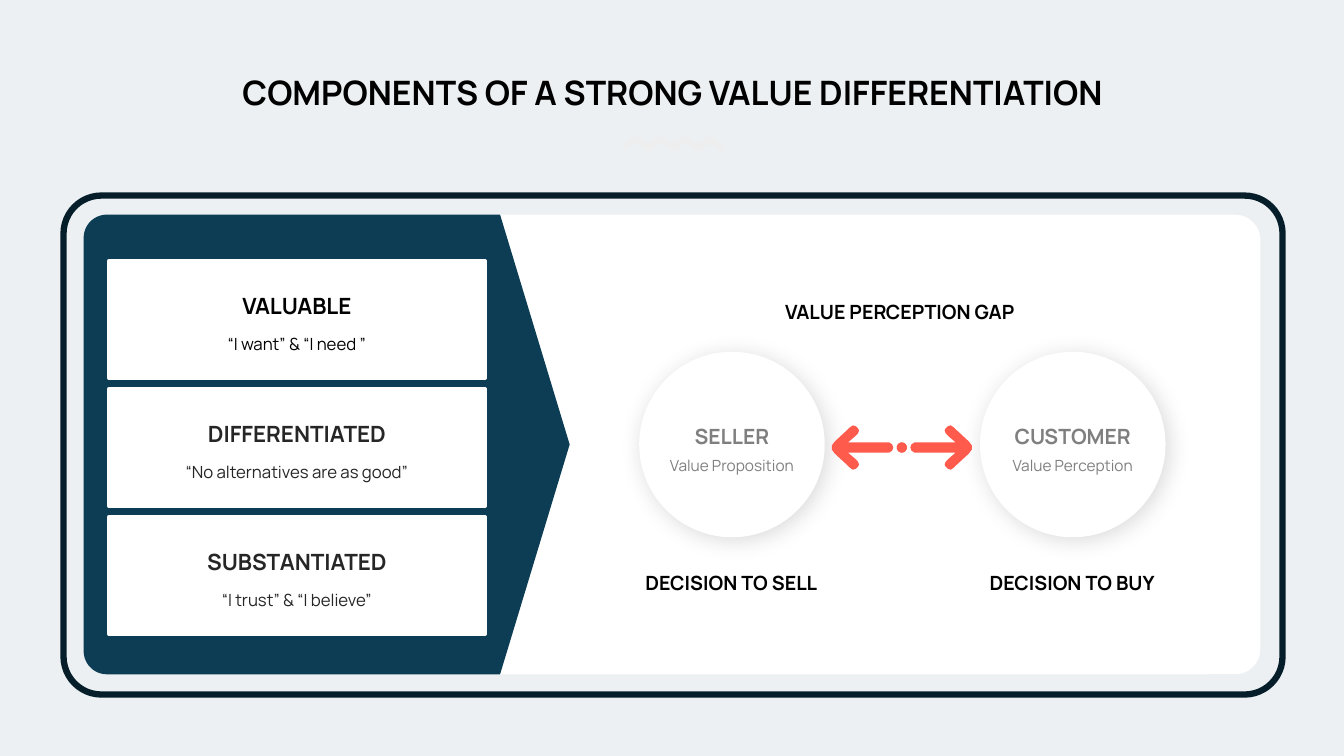
"""Build the slide on the components of a strong value differentiation."""
from copy import deepcopy
from math import cos, pi, radians, sin

from lxml.etree import SubElement
from pptx import Presentation
from pptx.dml.color import RGBColor
from pptx.enum.shapes import MSO_SHAPE
from pptx.enum.text import MSO_ANCHOR, MSO_AUTO_SIZE, PP_ALIGN
from pptx.oxml.ns import qn
from pptx.util import Inches, Pt

BACKGROUND = RGBColor(0xEC, 0xF0, 0xF2)
WHITE = RGBColor(0xFF, 0xFF, 0xFF)
BLACK = RGBColor(0x00, 0x00, 0x00)
NAVY = RGBColor(0x0C, 0x3D, 0x54)
MIDNIGHT = RGBColor(0x05, 0x1E, 0x2A)
CHARCOAL = RGBColor(0x26, 0x26, 0x26)
GREY = RGBColor(0x7F, 0x7F, 0x7F)
PALE = RGBColor(0xEE, 0xEE, 0xEE)
CORAL = RGBColor(0xFF, 0x5B, 0x4C)

COMPONENTS = [
    ("VALUABLE", "“I want” & “I need ”", BLACK),
    ("DIFFERENTIATED", "“No alternatives are as good”", CHARCOAL),
    ("SUBSTANTIATED", "“I trust” & “I believe”", CHARCOAL),
]
PARTIES = [
    (6.34, "SELLER", "Value Proposition", "DECISION TO SELL"),
    (9.72, "CUSTOMER", "Value Perception", "DECISION TO BUY"),
]
ARROW_AXIS = 4.44
ARROW_UPPER_HALF = [
    (8.86, 4.44), (8.85, 4.41), (8.82, 4.39), (8.78, 4.39), (8.41, 4.39),
    (8.48, 4.33), (8.51, 4.3), (8.52, 4.27), (8.51, 4.25), (8.49, 4.23),
    (8.46, 4.22), (8.43, 4.24), (8.41, 4.26), (8.28, 4.38), (8.25, 4.42),
    (8.25, 4.44),
]
ARROWS_CENTRE_SUM = 17.89


def add_run(paragraph, text, *, size, color=BLACK, bold=False, font="Manrope"):
    """Add one formatted run to a paragraph."""
    run = paragraph.add_run()
    run.text = text
    run.font.name = font
    run.font.size = Pt(size)
    run.font.bold = bold
    run.font.color.rgb = color
    return run


def arc(x, y, radius, start, end, steps=24):
    """Return points along an arc, with angles in degrees."""
    angles = [radians(start + (end - start) * i / steps) for i in range(steps + 1)]
    return [(x + radius * cos(a), y + radius * sin(a)) for a in angles]


class SlideBuilder:
    """Hold the style and current slide and draw its elements."""

    def __init__(self, slide):
        self.slide = slide
        fill = slide.background.fill
        fill.solid()
        fill.fore_color.rgb = BACKGROUND

    def paint(self, shape, fill=None, line=None, width=0):
        """Apply flat fill and line to a shape."""
        shape.shadow.inherit = False
        if fill is None:
            shape.fill.background()
        else:
            shape.fill.solid()
            shape.fill.fore_color.rgb = fill
        if line is None:
            shape.line.fill.background()
        else:
            shape.line.color.rgb = line
            shape.line.width = Pt(width)
        return shape

    def panel(self, kind, box, rotation=0, adjustment=None, **style):
        """Draw a preset shape."""
        shape = self.slide.shapes.add_shape(kind, *map(Inches, box))
        shape.rotation = rotation
        if adjustment is not None:
            shape.adjustments[0] = adjustment
        return self.paint(shape, **style)

    def outline(self, fill, *contours):
        """Draw closed contours, given in inches, as one freeform."""
        first, *others = [[(Inches(x), Inches(y)) for x, y in contour]
                          for contour in contours]
        builder = self.slide.shapes.build_freeform(*first[0])
        builder.add_line_segments(first[1:], close=True)
        for contour in others:
            builder.move_to(*contour[0])
            builder.add_line_segments(contour[1:], close=True)
        return self.paint(builder.convert_to_shape(), fill)

    def frame(self, shape, insets=(0, 0), anchor=MSO_ANCHOR.MIDDLE):
        """Prepare a wrapped text frame with centred first paragraph."""
        frame = shape.text_frame
        frame.word_wrap = True
        frame.vertical_anchor = anchor
        frame.margin_left = frame.margin_right = Inches(insets[0])
        frame.margin_top = frame.margin_bottom = Inches(insets[1])
        frame.paragraphs[0].alignment = PP_ALIGN.CENTER
        return frame

    def label(self, text, box, size=14, inset=0, spacing=None, anchor=MSO_ANCHOR.MIDDLE):
        """Write a bold heading in a text box."""
        textbox = self.slide.shapes.add_textbox(*map(Inches, box))
        frame = self.frame(textbox, (inset, inset), anchor)
        frame.auto_size = MSO_AUTO_SIZE.SHAPE_TO_FIT_TEXT
        paragraph = frame.paragraphs[0]
        if spacing:
            paragraph.line_spacing = spacing
        add_run(paragraph, text, size=size, bold=True)

    def card(self, top, heading, quote, color):
        """Draw a component card with its quote."""
        card = self.panel(MSO_SHAPE.RECTANGLE, (1.08, top, 3.73, 1.16),
                          fill=WHITE, line=WHITE, width=3)
        frame = self.frame(card, (0.1, 0.05))
        title = frame.paragraphs[0]
        title.line_spacing = 1.27
        add_run(title, heading, size=16, color=color, bold=True)
        body = frame.add_paragraph()
        body.alignment = PP_ALIGN.CENTER
        body.line_spacing = 1.7
        add_run(body, quote, size=12, color=color)

    def party(self, left, role, view):
        """Draw a shadowed circle for one party."""
        circle = self.panel(MSO_SHAPE.OVAL, (left, 3.49, 1.84, 1.84), fill=WHITE)
        effects = circle._element.spPr.find(qn("a:effectLst"))
        shadow = SubElement(effects, qn("a:outerShdw"), blurRad=str(Pt(16.9)),
                            dist=str(Pt(3)), dir="2700000", algn="tl", rotWithShape="0")
        black = SubElement(shadow, qn("a:srgbClr"), val=str(BLACK))
        SubElement(black, qn("a:alpha"), val="14000")
        paragraph = self.frame(circle).paragraphs[0]
        paragraph.line_spacing = 1.39
        name = add_run(paragraph, role, size=15, color=GREY, bold=True)
        paragraph.add_line_break()
        paragraph._p.find(qn("a:br")).append(deepcopy(name._r.find(qn("a:rPr"))))
        add_run(paragraph, view, size=11, color=GREY)


def main():
    """Compose and save the slide."""
    presentation = Presentation()
    presentation.slide_width = Inches(13.33)
    presentation.slide_height = Inches(7.5)
    builder = SlideBuilder(presentation.slides.add_slide(presentation.slide_layouts[6]))

    builder.panel(MSO_SHAPE.ROUND_2_SAME_RECTANGLE, (6.45, 0.64, 4.56, 7.54),
                  rotation=90, adjustment=0.055, fill=WHITE)
    builder.outline(NAVY, [(4.96, 2.13), (5.65, 4.41), (4.96, 6.69),
                           *arc(1.06, 6.46, 0.23, 90, 180),
                           *arc(1.06, 2.36, 0.23, 180, 270)])
    builder.label("COMPONENTS OF A STRONG VALUE DIFFERENTIATION",
                  (1.87, 0.68, 9.6, 0.46), size=24, inset=0.03, anchor=MSO_ANCHOR.TOP)

    crest = [(6.18 + 0.99 * i / 64, 1.39 + 0.03 * cos(8 * pi * i / 64)) for i in range(65)]
    builder.outline(PALE, crest + [(x, y + 0.07) for x, y in reversed(crest)])

    for row, component in enumerate(COMPONENTS):
        builder.card(2.59 + 1.27 * row, *component)
    for left, role, view, decision in PARTIES:
        builder.party(left, role, view)
        builder.label(decision, (left - 0.2, 5.66, 2.23, 0.24))
    builder.label("VALUE PERCEPTION GAP", (7.33, 2.87, 3.19, 0.3), spacing=1.63)

    lower_half = [(x, 2 * ARROW_AXIS - y) for x, y in reversed(ARROW_UPPER_HALF)]
    left_arrow = ARROW_UPPER_HALF + lower_half
    right_arrow = [(ARROWS_CENTRE_SUM - x, y) for x, y in left_arrow]
    dot = arc(ARROWS_CENTRE_SUM / 2, ARROW_AXIS, 0.05, 0, 360)
    for arrow in (left_arrow, right_arrow):
        builder.outline(CORAL, arrow, dot)

    builder.panel(MSO_SHAPE.ROUNDED_RECTANGLE, (4.2, -1.63, 4.95, 12.09),
                  rotation=90, adjustment=0.076, line=MIDNIGHT, width=4.5)
    presentation.save("out.pptx")


if __name__ == "__main__":
    main()
